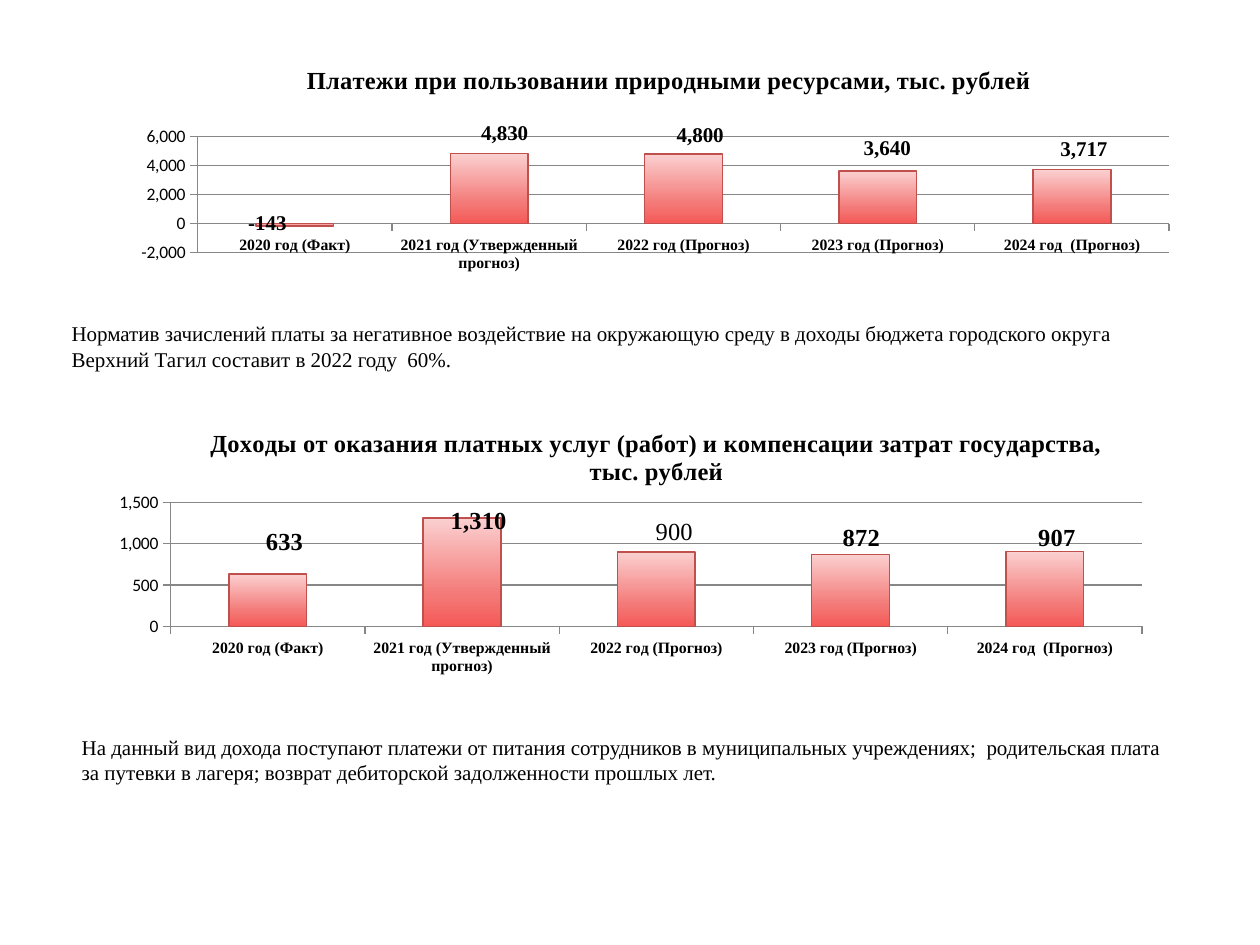
"""Build a slide with two budget revenue charts and their explanations."""
from dataclasses import dataclass

from pptx import Presentation
from pptx.chart.data import CategoryChartData
from pptx.dml.color import RGBColor
from pptx.enum.chart import XL_CHART_TYPE, XL_TICK_MARK
from pptx.enum.text import MSO_AUTO_SIZE, PP_ALIGN
from pptx.oxml import parse_xml
from pptx.oxml.ns import nsdecls, qn
from pptx.util import Inches, Pt


@dataclass(frozen=True)
class Theme:
    serif: str = "Times New Roman"
    sans: str = "Calibri"
    ink: str = "000000"
    grid: str = "878787"
    bar_edge: str = "C0504D"
    bar_stops: tuple = ((0, "FBD0D0"), (72, "F37876"), (100, "F55956"))
    base_size: int = 18
    title_size: int = 14
    note_size: int = 12
    value_size: int = 10
    category_size: int = 9
    number_format: str = "#,##0"


YEARS = ("2020 год (Факт)", "2021 год (Утвержденный прогноз)", "2022 год (Прогноз)",
         "2023 год (Прогноз)", "2024 год  (Прогноз)")
PLOT_SIZE = (80.9, 42.1)
LEADER_URI = "{CE6537A1-D6FC-4f65-9D91-7224C49458BB}"
LEADER_NS = "http://schemas.microsoft.com/office/drawing/2012/chart"


class RevenueSlide:
    def __init__(self, deck, theme):
        self.deck, self.theme = deck, theme
        self.slide = deck.slides.add_slide(deck.slide_layouts[6])

    def frame(self, left, top, width, height):
        across, down = self.deck.slide_width, self.deck.slide_height
        return [round(percent * side / 100) for percent, side in
                ((left, across), (top, down), (width, across), (height, down))]

    def style(self, font, size, bold=False, family=None):
        font.name, font.size, font.bold = family or self.theme.serif, Pt(size), bold
        font.color.rgb = RGBColor.from_string(self.theme.ink)

    def rule(self, line, color, width):
        line.color.rgb = RGBColor.from_string(color)
        line.width = Pt(width)

    def layout(self, x, y, size=None, edge=False):
        modes = '<c:xMode val="edge"/><c:yMode val="edge"/>' if edge else ""
        target, extent = "", ""
        if size:
            target = '<c:layoutTarget val="inner"/>'
            extent = f'<c:w val="{size[0] / 100}"/><c:h val="{size[1] / 100}"/>'
        return parse_xml(f'<c:layout {nsdecls("c")}><c:manualLayout>{target}{modes}'
                         f'<c:x val="{x / 100}"/><c:y val="{y / 100}"/>{extent}'
                         '</c:manualLayout></c:layout>')

    def place(self, parent, index, layout):
        for old in parent.findall(qn("c:layout")):
            parent.remove(old)
        parent.insert(index, layout)

    def note(self, frame, lines):
        text = self.slide.shapes.add_textbox(*self.frame(*frame)).text_frame
        text.word_wrap = False
        text.auto_size = MSO_AUTO_SIZE.SHAPE_TO_FIT_TEXT
        text.text = "\n".join(lines)
        for paragraph in text.paragraphs:
            self.style(paragraph.font, self.theme.note_size)

    def title(self, chart, lines, corner):
        heading = chart.chart_title.text_frame
        heading.text = "\n".join(lines)
        for paragraph in heading.paragraphs:
            paragraph.alignment = PP_ALIGN.CENTER
            self.style(paragraph.font, self.theme.title_size, True)
        self.place(chart.element.xpath(".//c:title")[0], 1, self.layout(*corner, edge=True))

    def axes(self, chart, low, high, step):
        theme, values, years = self.theme, chart.value_axis, chart.category_axis
        values.minimum_scale, values.maximum_scale, values.major_unit = low, high, step
        values.tick_labels.number_format = theme.number_format
        values.tick_labels.number_format_is_linked = False
        self.style(values.tick_labels.font, theme.value_size, family=theme.sans)
        self.style(years.tick_labels.font, theme.category_size, True)
        values.has_major_gridlines = True
        for line in (values.major_gridlines.format.line, values.format.line, years.format.line):
            self.rule(line, theme.grid, 0.75)
        for axis in (values, years):
            axis.major_tick_mark = XL_TICK_MARK.OUTSIDE

    def bars(self, chart):
        series = chart.plots[0].series[0]
        series.invert_if_negative = False
        series.format.fill.solid()
        self.rule(series.format.line, self.theme.bar_edge, 0.79)
        stops = "".join(f'<a:gs pos="{percent * 1000}"><a:srgbClr val="{color}"/></a:gs>'
                        for percent, color in self.theme.bar_stops)
        gradient = parse_xml(f'<a:gradFill {nsdecls("a")} rotWithShape="1"><a:gsLst>{stops}</a:gsLst>'
                             '<a:lin ang="5400000" scaled="0"/></a:gradFill>')
        solid = chart.element.xpath(".//c:ser/c:spPr/a:solidFill")[0]
        solid.getparent().replace(solid, gradient)
        return series

    def hide_leaders(self, chart):
        for leader in chart.element.xpath(".//c:showLeaderLines"):
            leader.set("val", "0")
        chart.element.xpath(".//c:ser/c:dLbls")[0].append(parse_xml(
            f'<c:extLst {nsdecls("c")}><c:ext uri="{LEADER_URI}" xmlns:c15="{LEADER_NS}">'
            '<c15:showLeaderLines val="0"/></c:ext></c:extLst>'))

    def labels(self, chart, series, size, offsets, typed):
        labels = series.data_labels
        labels.show_value = True
        labels.number_format = self.theme.number_format
        labels.number_format_is_linked = False
        self.style(labels.font, size, True)
        for index in range(len(offsets)):
            label = series.points[index].data_label
            if index in typed:
                label.text_frame.text = typed[index]
                self.style(label.text_frame.paragraphs[0].font, size)
            else:
                self.style(label.font, size, True)
        for element, offset in zip(chart.element.xpath(".//c:ser/c:dLbls/c:dLbl"), offsets):
            self.place(element, 1, self.layout(*offset))
        self.hide_leaders(chart)

    def chart(self, frame, title, corner, plot, amounts, scale, label_size, offsets, typed=()):
        data = CategoryChartData(number_format=self.theme.number_format)
        data.categories = YEARS
        data.add_series("Series 1", amounts)
        chart = self.slide.shapes.add_chart(
            XL_CHART_TYPE.COLUMN_STACKED, *self.frame(*frame), data).chart
        self.style(chart.font, self.theme.base_size, family=self.theme.sans)
        chart.has_legend = False
        chart.plots[0].gap_width, chart.plots[0].overlap = 150, 100
        chart.plots[0].vary_by_categories = False
        self.title(chart, title, corner)
        self.axes(chart, *scale)
        self.labels(chart, self.bars(chart), label_size, offsets, typed)
        self.place(chart.element.xpath(".//c:plotArea")[0], 0,
                   self.layout(*plot, size=PLOT_SIZE, edge=True))


def main():
    deck = Presentation()
    deck.slide_width, deck.slide_height = Inches(10), Inches(7.5)
    page = RevenueSlide(deck, Theme())
    page.chart((2.3, 44.8, 95.3, 31.2),
               ("Доходы от оказания платных услуг (работ) и компенсации затрат государства,",
                "тыс. рублей"),
               (14.8, 0.3), (11.8, 26.8), (633, 1310, 900, 872, 907), (0, 1500, 500), 14,
               ((1.4, -19.7), (1.4, -17.5), (1.5, -19.3), (0.9, -17.7), (1, -17.3)),
               {2: "900"})
    page.note((5.5, 77.1, 89.4, 6.7),
              ("На данный вид дохода поступают платежи от питания сотрудников в муниципальных "
               "учреждениях;  родительская плата",
               "за путевки в лагеря; возврат дебиторской задолженности прошлых лет."))
    page.chart((1.6, 6.3, 95.3, 29.2),
               ("Платежи при пользовании природными ресурсами, тыс. рублей",),
               (23.5, 0.1), (14.8, 28), (-143, 4830, 4800, 3640, 3717), (-2000, 6000, 2000), 12,
               ((-2.3, -0.4), (1.3, -20), (1.4, -19.3), (0.8, -17.6), (1, -17.4)))
    page.note((4.7, 33.3, 86.3, 10.8),
              ("Норматив зачислений платы за негативное воздействие на окружающую среду "
               "в доходы бюджета городского округа",
               "Верхний Тагил составит в 2022 году  60%."))
    deck.save("out.pptx")


if __name__ == "__main__":
    main()
